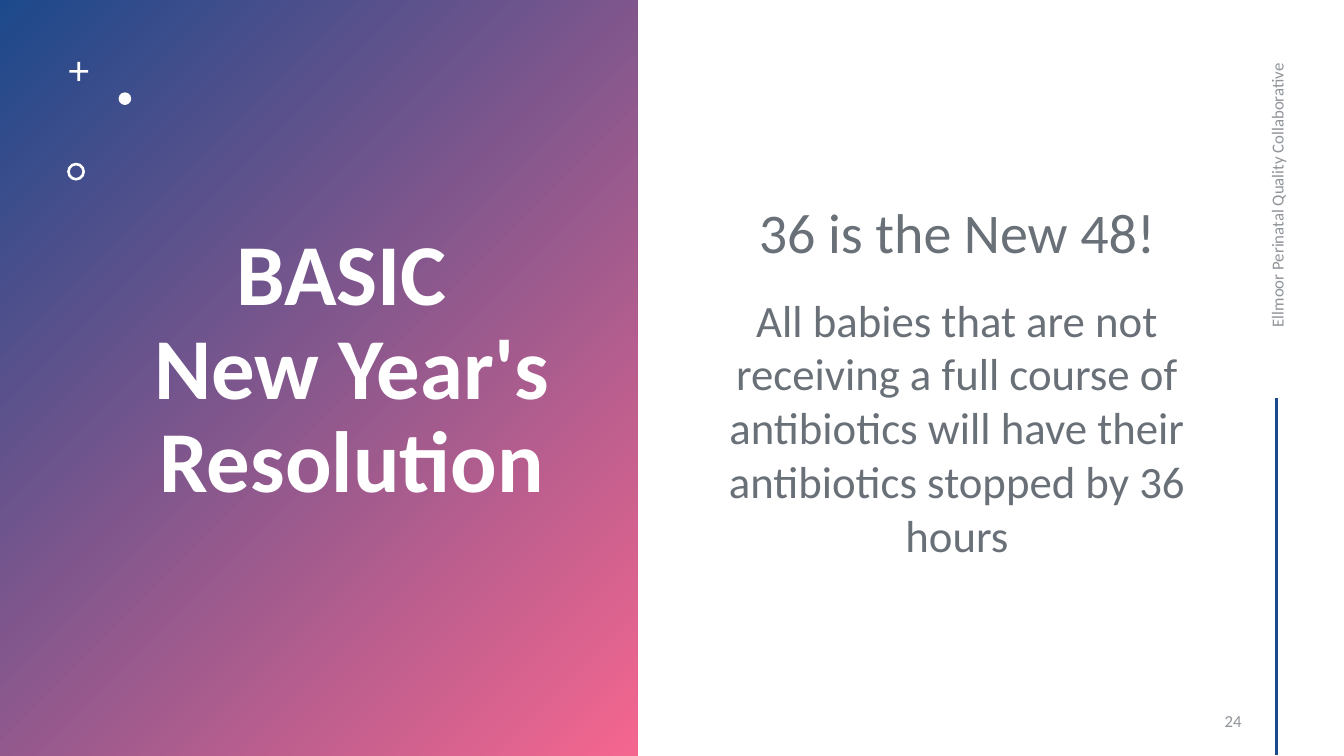
from dataclasses import dataclass

from lxml.etree import SubElement
from pptx import Presentation
from pptx.dml.color import RGBColor
from pptx.enum.shapes import MSO_CONNECTOR, MSO_SHAPE
from pptx.enum.text import MSO_ANCHOR, MSO_AUTO_SIZE, PP_ALIGN
from pptx.oxml.ns import qn
from pptx.util import Emu, Pt

EMU_PER_PX = 9525


@dataclass(frozen=True)
class Theme:
    """Hold the colours, font and type sizes of the slide."""

    font: str = "Calibri"
    blue: str = "1C498B"
    pink: str = "F5668F"
    white: str = "FFFFFF"
    body: str = "697077"
    muted: str = "8F9499"
    title_size: int = 62
    lead_size: int = 40
    body_size: int = 32
    footer_size: int = 12


THEME = Theme()


def px(*lengths):
    """Turn whole pixels into EMU lengths."""
    return [Emu(length * EMU_PER_PX) for length in lengths]


def color(code):
    """Return the colour of a hex code."""
    return RGBColor.from_string(code)


def place(shape, area):
    """Move and size a shape to an area in pixels."""
    shape.left, shape.top, shape.width, shape.height = px(*area)


def prepare_frame(shape):
    """Make the text of a shape wrap and sit in the middle."""
    frame = shape.text_frame
    frame.word_wrap = True
    frame.auto_size = MSO_AUTO_SIZE.NONE
    frame.vertical_anchor = MSO_ANCHOR.MIDDLE
    return frame


def format_paragraph(para, size, code, align, bold=False):
    """Align a paragraph and format its runs."""
    para.alignment = align
    for span in para.runs:
        span.font.name = THEME.font
        span.font.size = Pt(size)
        span.font.bold = bold
        span.font.color.rgb = color(code)


def add_panel(page, area):
    """Add the gradient panel behind the title."""
    panel = page.shapes.add_shape(MSO_SHAPE.RECTANGLE, *px(*area))
    panel.shadow.inherit = False
    panel.line.fill.background()
    panel.fill.gradient()
    panel.fill.gradient_angle = 315
    stops = zip(panel.fill.gradient_stops, (THEME.blue, THEME.pink), (0, 1))
    for stop, code, position in stops:
        stop.color.rgb = color(code)
        stop.position = position


def add_ornament(page, kind, area, adjustment=None):
    """Add a small white ornament."""
    ornament = page.shapes.add_shape(kind, *px(*area))
    ornament.shadow.inherit = False
    ornament.fill.solid()
    ornament.fill.fore_color.rgb = color(THEME.white)
    ornament.line.fill.background()
    if adjustment is not None:
        ornament.adjustments[0] = adjustment


def set_title(page, text, area):
    """Fill, place and format the title placeholder."""
    title = page.shapes.title
    place(title, area)
    frame = prepare_frame(title)
    frame.text = text
    para = frame.paragraphs[0]
    para.line_spacing = 0.9
    format_paragraph(para, THEME.title_size, THEME.white, PP_ALIGN.CENTER, True)


def add_body(page, lines, area):
    """Add centred body paragraphs from pairs of text and size."""
    frame = prepare_frame(page.shapes.add_textbox(*px(*area)))
    frame.text = "\n".join(text for text, size in lines)
    for para, (text, size) in zip(frame.paragraphs, lines):
        para.space_before = para.space_after = Pt(10)
        format_paragraph(para, size, THEME.body, PP_ALIGN.CENTER)


def add_footer(page, text, area, align, rotation=0):
    """Add a small grey label."""
    box = page.shapes.add_textbox(*px(*area))
    box.rotation = rotation
    frame = prepare_frame(box)
    frame.text = text
    para = frame.paragraphs[0]
    para.space_after = Pt(6)
    format_paragraph(para, THEME.footer_size, THEME.muted, align)


def add_rule(page, start, end):
    """Add the vertical blue line."""
    rule = page.shapes.add_connector(MSO_CONNECTOR.STRAIGHT, *px(*start, *end))
    rule.line.color.rgb = color(THEME.blue)
    rule.line.width = Pt(2)
    SubElement(rule.element.spPr, qn("a:effectLst"))


def main():
    """Build and save the slide."""
    deck = Presentation()
    deck.slide_width, deck.slide_height = px(1280, 720)
    page = deck.slides.add_slide(deck.slide_layouts[5])
    add_panel(page, (0, 0, 607, 720))
    title = page.shapes.title.element
    title.getparent().append(title)
    set_title(page, "BASIC \vNew Year's Resolution", (125, 40, 420, 627))
    add_ornament(page, MSO_SHAPE.CROSS, (66, 59, 18, 18), 0.43)
    add_ornament(page, MSO_SHAPE.OVAL, (113, 88, 12, 12))
    add_ornament(page, MSO_SHAPE.DONUT, (64, 155, 17, 17), 0.15)
    add_body(
        page,
        [
            ("36 is the New 48!", THEME.lead_size),
            (
                "All babies that are not receiving a full course of antibiotics "
                "will have their antibiotics stopped by 36 hours",
                THEME.body_size,
            ),
        ],
        (661, 55, 501, 612),
    )
    add_footer(
        page,
        "Ellmoor Perinatal Quality Collaborative",
        (1030, 167, 372, 38),
        PP_ALIGN.CENTER,
        270,
    )
    add_footer(page, "24", (904, 667, 288, 38), PP_ALIGN.RIGHT)
    add_rule(page, (1216, 379), (1216, 719))
    deck.save("out.pptx")


if __name__ == "__main__":
    main()
